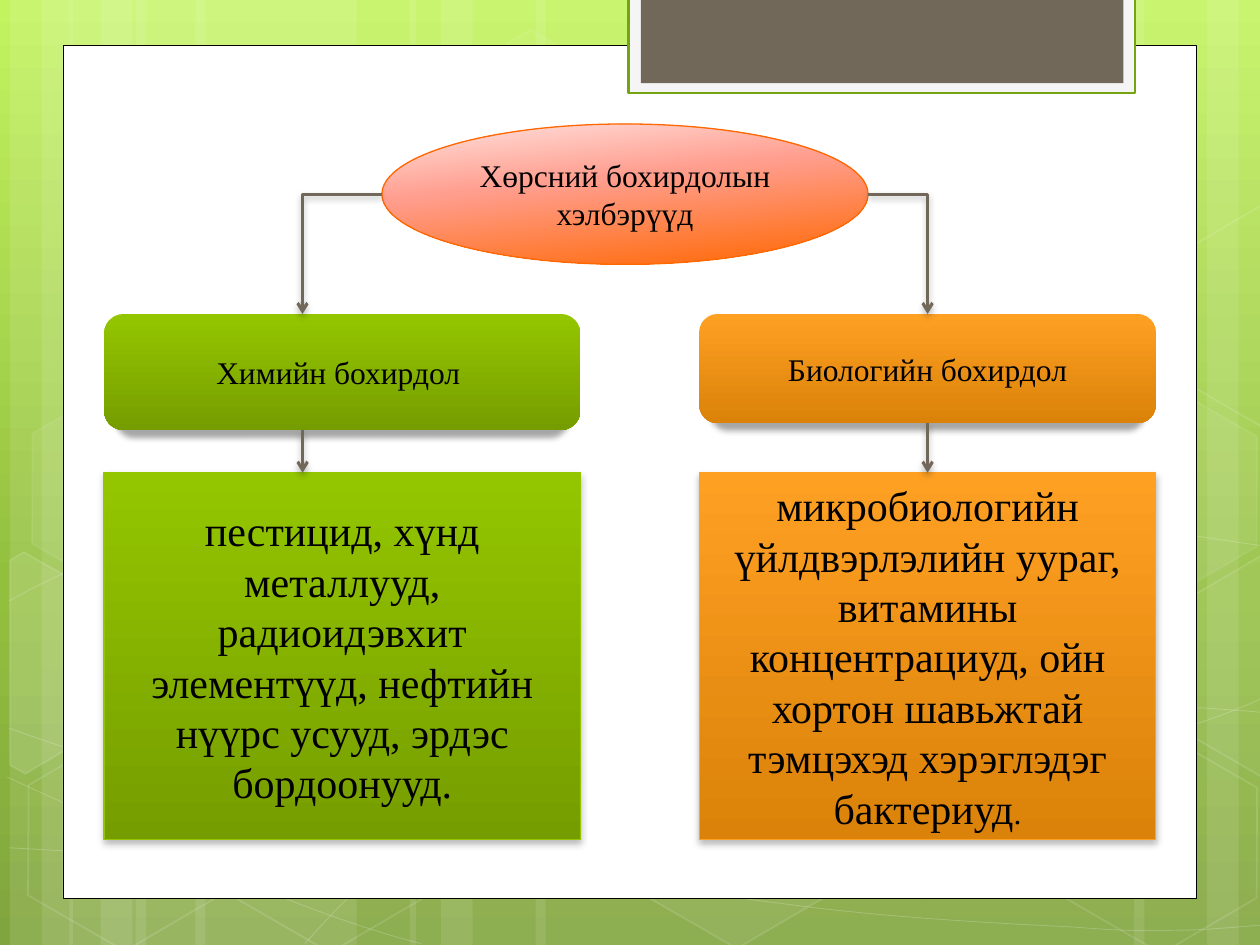
import copy

import lxml.etree
import pptx
import pptx.dml.color
import pptx.enum.shapes
import pptx.enum.text
import pptx.oxml.ns
import pptx.util

Cm, Pt = pptx.util.Cm, pptx.util.Pt
qn = pptx.oxml.ns.qn
rgb = pptx.dml.color.RGBColor.from_string
SHAPE = pptx.enum.shapes.MSO_SHAPE
CONNECTOR = pptx.enum.shapes.MSO_CONNECTOR

THEME = {
    "font": "Times New Roman",
    "label_size": Pt(18),
    "body_size": Pt(24),
    "ink": "000000",
    "white": "FFFFFF",
    "brown": "71685A",
    "tab": "F5F5F5",
    "tab_edge": "74A510",
    "green": "94C600",
    "amber": "FEA022",
    "coral": "FF6700",
    "background_stops": [(0, "C3F35F"), (0.62, "93BF3F"), (1, "81A53E")],
    "coral_stops": [(0, "FFE2DE"), (0.4, "FF9E8F"), (1, "FF6700")],
    "green_stops": [(0, "94C600"), (1, "769D00")],
    "amber_stops": [(0, "FEA022"), (1, "DB820A")],
    # opacity %, blur pt, distance pt, horizontal scale %
    "label_shadow": (34, 3.5, 4, 95),
    "soft_shadow": (28, 4, 2, 100),
}


def set_gradient(fill, owner, stops, angle=90):
    """Give fill the (position, colour) stops; angle runs clockwise."""
    fill.gradient()
    fill.gradient_angle = 360 - angle
    stop_list = owner.find(".//" + qn("a:gsLst"))
    while len(stop_list) < len(stops):
        stop_list.append(copy.deepcopy(stop_list[0]))
    for stop, (position, color) in zip(fill.gradient_stops, stops):
        stop.position = position
        stop.color.rgb = rgb(color)


def style(part, fill=None, angle=90, fill_alpha=100, line=None, width=1,
          line_alpha=100, shadow=None):
    """Set fill (colour or gradient stops), line and shadow of a shape or connector."""
    properties = part._element.spPr
    if line:
        part.line.color.rgb = rgb(line)
        part.line.width = Pt(width)
    else:
        part.line.fill.background()
    if isinstance(fill, list):
        set_gradient(part.fill, properties, fill, angle)
    elif fill:
        part.fill.solid()
        part.fill.fore_color.rgb = rgb(fill)
    elif hasattr(part, "fill"):
        part.fill.background()
    for route, alpha in (("a:solidFill/a:srgbClr", fill_alpha),
                         ("a:ln/a:solidFill/a:srgbClr", line_alpha)):
        for color in properties.xpath(route):
            if alpha < 100:
                lxml.etree.SubElement(color, qn("a:alpha"), val=str(alpha * 1000))
    effects = lxml.etree.SubElement(properties, qn("a:effectLst"))
    if shadow:
        opacity, blur, distance, scale = shadow
        cast = lxml.etree.SubElement(
            effects, qn("a:outerShdw"), blurRad=str(Pt(blur)), dist=str(Pt(distance)),
            dir="5400000", sx=str(scale * 1000), rotWithShape="0")
        color = lxml.etree.SubElement(cast, qn("a:srgbClr"), val=THEME["ink"])
        lxml.etree.SubElement(color, qn("a:alpha"), val=str(opacity * 1000))


deck = pptx.Presentation()
deck.slide_width, deck.slide_height = Cm(25.4), Cm(19.05)
slide = deck.slides.add_slide(deck.slide_layouts[6])
shapes = slide.shapes
set_gradient(slide.background.fill, slide._element, THEME["background_stops"])

# Translucent vertical ribbons: left, width
for left, width in [
    (2.74, 4.45), (0.2, 1.27), (0.84, 2.11), (3.94, 4.45), (1.4, 1.27), (2.03, 2.11),
    (18.62, 4.45), (24.33, 1.27), (22.86, 2.11), (10.8, 7.82), (8.26, 1.27), (8.89, 2.11),
]:
    ribbon = shapes.add_shape(SHAPE.RECTANGLE, Cm(left), 0, Cm(width), deck.slide_height)
    style(ribbon, THEME["white"], fill_alpha=10)

# Thin waves: a start point, then two control points and an end point per Bézier piece
for knots in [
    [(0.18, 17.09), (1.55, 17.17), (2.92, 17.25), (4.83, 17.22),
     (6.73, 17.2), (9.09, 17.15), (11.63, 16.89), (14.17, 16.64), (17.78, 16.15),
     (20.12, 15.67), (22.43, 15.19), (24.82, 14.43), (25.58, 14)],
    [(0.18, 12.12), (0.91, 11.71), (1.65, 11.33), (3.07, 10.95),
     (4.52, 10.57), (6.58, 10.01), (8.81, 9.83), (11.07, 9.65), (13.82, 9.63),
     (16.61, 9.83), (19.41, 10.03), (24.05, 10.82), (25.58, 11.02)],
    [(0.15, 15.67), (3.23, 17.07), (6.27, 18.47), (8.48, 19.02)],
    [(0.18, 14.68), (0.97, 14.96), (1.78, 15.24), (3.25, 15.65),
     (4.72, 16.03), (6.93, 16.66), (9.07, 17.09), (11.18, 17.53), (13.84, 17.98),
     (15.95, 18.24), (18.06, 18.52), (20.32, 18.62), (21.67, 18.69),
     (22.99, 18.8), (23.34, 18.75), (24, 18.75), (24.66, 18.72), (25.12, 18.67),
     (25.58, 18.64)],
    [(6.15, 19.02), (6.6, 18.52), (7.06, 18.01), (7.67, 17.55),
     (8.28, 17.09), (9.14, 16.59), (9.86, 16.23), (10.57, 15.88), (11, 15.72),
     (11.94, 15.47), (12.85, 15.21), (14.55, 14.86), (15.44, 14.68),
     (16.36, 14.5), (16.48, 14.5), (17.27, 14.45), (18.06, 14.38), (19.3, 14.3),
     (20.17, 14.27), (21.06, 14.25), (22.5, 14.27), (22.5, 14.27),
     (23.1, 14.27), (23.6, 14.27), (24.21, 14.27), (24.66, 14.3), (25.1, 14.33),
     (25.32, 14.35), (25.55, 14.38), (25.48, 14.35), (25.55, 14.38)],
]:
    knots = [(Cm(x), Cm(y)) for x, y in knots]
    outline = shapes.build_freeform(*knots[0])
    outline.add_line_segments(knots[1:], close=False)
    wave = outline.convert_to_shape()
    route = wave._element.spPr.find(".//" + qn("a:path"))
    segments = route.findall(qn("a:lnTo"))
    for first in range(0, len(segments), 3):
        curve = lxml.etree.SubElement(route, qn("a:cubicBezTo"))
        for segment in segments[first:first + 3]:
            curve.append(segment[0])
            route.remove(segment)
    style(wave, line=THEME["white"], width=0.5, line_alpha=20)

# Hexagons: left, top, fill opacity (0 for none), line opacity
for left, top, fill_alpha, line_alpha in [
    (8.48, 0.91, 4, 8), (12.62, 14.96, 6, 12), (0.28, 15.01, 0, 12), (0.36, 7.92, 7, 8),
    (4.42, 15.04, 0, 12), (21.18, 15.06, 0, 12), (21.18, 7.98, 7, 8),
]:
    hexagon = shapes.add_shape(SHAPE.HEXAGON, Cm(left), Cm(top), Cm(4.45), Cm(3.86))
    hexagon.adjustments[0] = 0.285
    hexagon.rotation = 30
    style(hexagon, THEME["white"] if fill_alpha else None, fill_alpha=fill_alpha,
          line=THEME["white"], line_alpha=line_alpha)

# Hexagons cut by the slide edge
for fill_alpha, corners in [
    (10, [(0.2, 11.3), (0.48, 11.13), (2.44, 12.24), (2.41, 14.48), (0.51, 15.6), (0.2, 15.42)]),
    (4, [(23.52, 12.32), (25.43, 11.2), (25.63, 11.33), (25.63, 15.57), (25.45, 15.67),
         (23.52, 14.55)]),
    (0, [(23.52, 5.26), (25.43, 4.14), (25.65, 4.27), (25.63, 8.51), (25.45, 8.61),
         (23.52, 7.49)]),
]:
    corners = [(Cm(x), Cm(y)) for x, y in corners]
    cut_hexagon = shapes.build_freeform(*corners[0])
    cut_hexagon.add_line_segments(corners[1:], close=True)
    style(cut_hexagon.convert_to_shape(), THEME["white"] if fill_alpha else None,
          fill_alpha=fill_alpha, line=THEME["white"], line_alpha=12)

# White page and the tab hanging over its top edge
for box, look in [
    ((1.27, 0.91, 22.86, 17.2), {"fill": THEME["white"], "line": THEME["ink"], "width": 0.5}),
    ((12.67, -0.05, 10.21, 1.93),
     {"fill": THEME["tab"], "line": THEME["tab_edge"], "width": 1.25}),
    ((12.92, -0.05, 9.73, 1.73), {"fill": THEME["brown"]}),
]:
    style(shapes.add_shape(SHAPE.RECTANGLE, *map(Cm, box)), **look)

# Diagram nodes: preset, box, look, text runs with sizes
label, body = THEME["label_size"], THEME["body_size"]
nodes = []
for preset, box, look, runs in [
    (SHAPE.OVAL, (7.7, 2.5, 9.8, 2.83),
     {"fill": THEME["coral_stops"], "angle": 84, "line": THEME["coral"], "width": 0.75},
     [("Хөрсний бохирдолын хэлбэрүүд", label)]),
    (SHAPE.ROUNDED_RECTANGLE, (2.1, 6.33, 9.6, 2.34),
     {"fill": THEME["green_stops"], "shadow": THEME["label_shadow"]},
     [("Химийн бохирдол ", label)]),
    (SHAPE.ROUNDED_RECTANGLE, (14.1, 6.33, 9.2, 2.2),
     {"fill": THEME["amber_stops"], "shadow": THEME["label_shadow"]},
     [("Биологийн бохирдол", label)]),
    (SHAPE.RECTANGLE, (2.1, 9.53, 9.6, 7.39),
     {"fill": THEME["green_stops"], "line": THEME["green"], "width": 0.75,
      "shadow": THEME["soft_shadow"]},
     [("пестицид, хүнд металлууд, радиоидэвхит элементүүд, нефтийн нүүрс усууд, "
       "эрдэс бордоонууд.", body)]),
    (SHAPE.RECTANGLE, (14.1, 9.53, 9.2, 7.39),
     {"fill": THEME["amber_stops"], "line": THEME["amber"], "width": 0.75,
      "shadow": THEME["soft_shadow"]},
     [("микробиологийн үйлдвэрлэлийн уураг, витамины концентрациуд, ойн хортон "
       "шавьжтай тэмцэхэд хэрэглэдэг бактериуд", body), (".", label)]),
]:
    node = shapes.add_shape(preset, *map(Cm, box))
    style(node, **look)
    paragraph = node.text_frame.paragraphs[0]
    paragraph.alignment = pptx.enum.text.PP_ALIGN.CENTER
    for words, size in runs:
        run = paragraph.add_run()
        run.text = words
        run.font.color.rgb = rgb(THEME["ink"])
        for name, value in {"name": THEME["font"], "size": size}.items():
            setattr(run.font, name, value)
    nodes.append(node)
topic, chemical, biological, chemical_examples, biological_examples = nodes

# Arrows from the topic to each kind, and from each kind to its examples
chemical_x, biological_x = Cm(6.1), Cm(18.7)
topic_y = topic.top + topic.height // 2
for kind, start, end in [
    (CONNECTOR.ELBOW, (topic.left + topic.width, topic_y), (biological_x, biological.top)),
    (CONNECTOR.ELBOW, (topic.left, topic_y), (chemical_x, chemical.top)),
    (CONNECTOR.STRAIGHT, (biological_x, biological.top + biological.height),
     (biological_x, biological_examples.top)),
    (CONNECTOR.STRAIGHT, (chemical_x, chemical.top + chemical.height),
     (chemical_x, chemical_examples.top)),
]:
    arrow = shapes.add_connector(kind, *start, *end)
    style(arrow, line=THEME["brown"], width=1.75, shadow=THEME["soft_shadow"])
    properties = arrow._element.spPr
    lxml.etree.SubElement(properties.find(qn("a:ln")), qn("a:tailEnd"), type="arrow")
    if kind == CONNECTOR.ELBOW:
        properties.find(qn("a:prstGeom")).set("prst", "bentConnector2")
    elif start[0] == biological_x:
        arrow.begin_connect(biological, 2)
        arrow.end_connect(biological_examples, 0)

deck.save("out.pptx")
